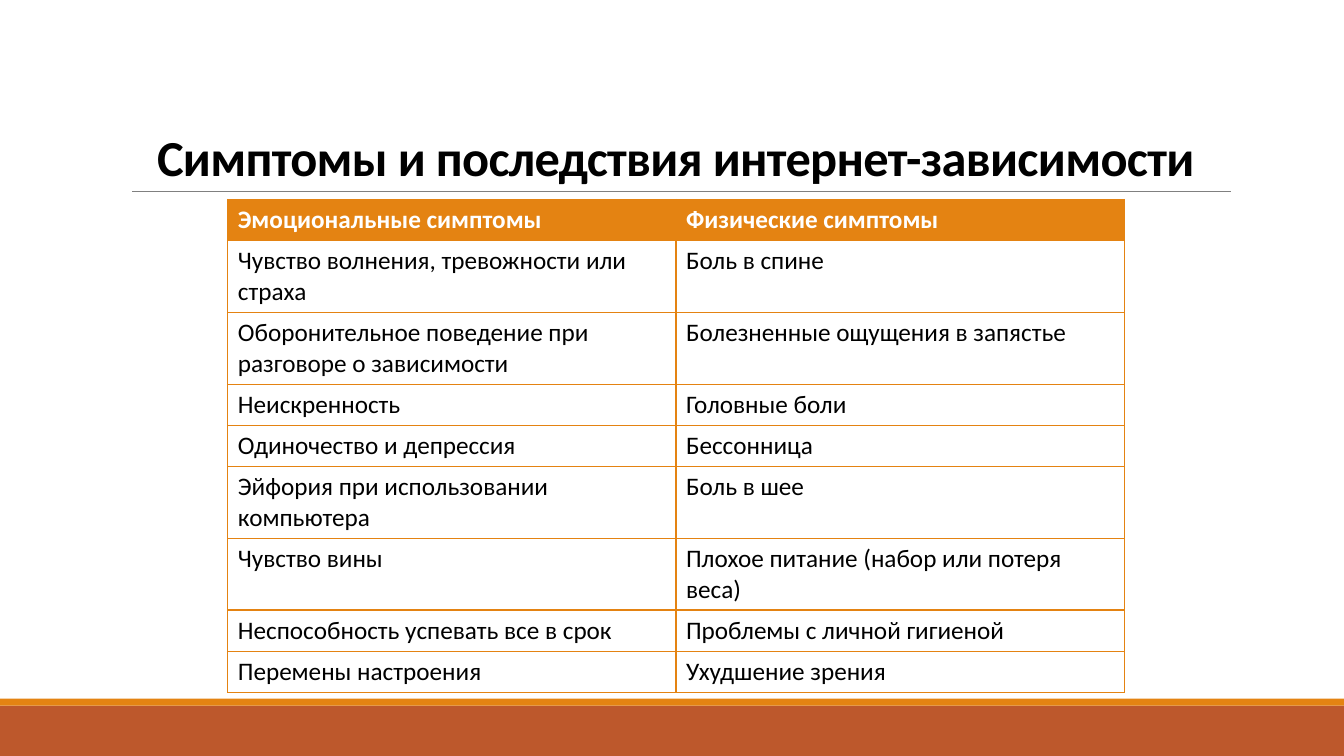
from lxml import etree
from pptx import Presentation
from pptx.dml.color import RGBColor
from pptx.enum.shapes import MSO_CONNECTOR, MSO_SHAPE
from pptx.enum.text import MSO_ANCHOR, PP_ALIGN
from pptx.oxml.ns import qn
from pptx.util import Inches, Pt

RECT = MSO_SHAPE.RECTANGLE
STRAIGHT = MSO_CONNECTOR.STRAIGHT
BOTTOM = MSO_ANCHOR.BOTTOM
CENTER = PP_ALIGN.CENTER

FONT = "Calibri"
ORANGE, RUST, GRAY = "E48312", "BD582C", "808080"
BLACK, WHITE = "000000", "FFFFFF"
WIDTH, HEIGHT = 13.33, 7.5
ROW_HEIGHT = 0.41

TITLE = "Симптомы и последствия интернет-зависимости"
SYMPTOMS = [
    ("Эмоциональные симптомы", "Физические симптомы"),
    ("Чувство волнения, тревожности или страха", "Боль в спине"),
    ("Оборонительное поведение при разговоре о зависимости",
     "Болезненные ощущения в запястье"),
    ("Неискренность", "Головные боли"),
    ("Одиночество и депрессия", "Бессонница"),
    ("Эйфория при использовании компьютера", "Боль в шее"),
    ("Чувство вины", "Плохое питание (набор или потеря веса)"),
    ("Неспособность успевать все в срок", "Проблемы с личной гигиеной"),
    ("Перемены настроения", "Ухудшение зрения"),
]


def rgb(color):
    return RGBColor.from_string(color)


def format_run(r, size, color, bold):
    r.font.name = FONT
    r.font.size = Pt(size)
    r.font.bold = bold
    r.font.color.rgb = rgb(color)


def add_band(slide, x, y, w, h, color):
    sp = slide.shapes.add_shape(RECT, *map(Inches, (x, y, w, h)))
    sp.shadow.inherit = False
    sp.fill.solid()
    sp.fill.fore_color.rgb = rgb(color)
    sp.line.fill.background()


def add_footer(slide, x, y, w, h):
    stripe = h / 8
    add_band(slide, x, y + stripe, w, h - stripe, RUST)
    add_band(slide, x, y, w, stripe, ORANGE)


def add_title(slide, x, y, w, h):
    line = slide.shapes.add_connector(
        STRAIGHT, *map(Inches, (x + 0.11, y + h, x + w + 0.01, y + h)))
    line.line.color.rgb = rgb(GRAY)
    line.line.width = Pt(0.5)
    etree.SubElement(line._element.spPr, qn("a:effectLst"))

    sp = slide.shapes.title
    sp.left, sp.top, sp.width, sp.height = map(Inches, (x, y, w, h))
    tf = sp.text_frame
    tf.text = TITLE
    tf.word_wrap = True
    tf.vertical_anchor = BOTTOM
    p = tf.paragraphs[0]
    p.alignment = CENTER
    p.line_spacing = 0.85
    r = p.runs[0]
    format_run(r, 36, BLACK, True)
    r.font._element.set("spc", "-50")


def add_borders(cell, color, points):
    tcPr = cell._tc.get_or_add_tcPr()
    for side in ("a:lnL", "a:lnR", "a:lnT", "a:lnB"):
        ln = etree.SubElement(tcPr, qn(side), w=str(Pt(points)))
        fill = etree.SubElement(ln, qn("a:solidFill"))
        etree.SubElement(fill, qn("a:srgbClr"), val=color)


def format_cell(cell, text, header):
    cell.text = text
    format_run(cell.text_frame.paragraphs[0].runs[0], 18,
               WHITE if header else BLACK, header)
    add_borders(cell, ORANGE, 1)
    if header:
        cell.fill.solid()
        cell.fill.fore_color.rgb = rgb(ORANGE)
    else:
        cell.fill.background()


def add_symptoms(slide, x, y, w):
    rows, cols = len(SYMPTOMS), len(SYMPTOMS[0])
    frame = slide.shapes.add_table(
        rows, cols, *map(Inches, (x, y, w, rows * ROW_HEIGHT)))
    table = frame.table
    table.horz_banding = False
    for row, texts in enumerate(SYMPTOMS):
        table.rows[row].height = Inches(ROW_HEIGHT)
        for col, text in enumerate(texts):
            format_cell(table.cell(row, col), text, row == 0)


def main():
    prs = Presentation()
    prs.slide_width, prs.slide_height = Inches(WIDTH), Inches(HEIGHT)
    slide = prs.slides.add_slide(prs.slide_layouts[5])
    add_footer(slide, 0, 6.93, WIDTH, HEIGHT - 6.93)
    add_title(slide, 1.2, 0.31, 11, 1.59)
    add_symptoms(slide, 2.26, 1.98, 8.89)
    prs.save("out.pptx")


if __name__ == "__main__":
    main()
